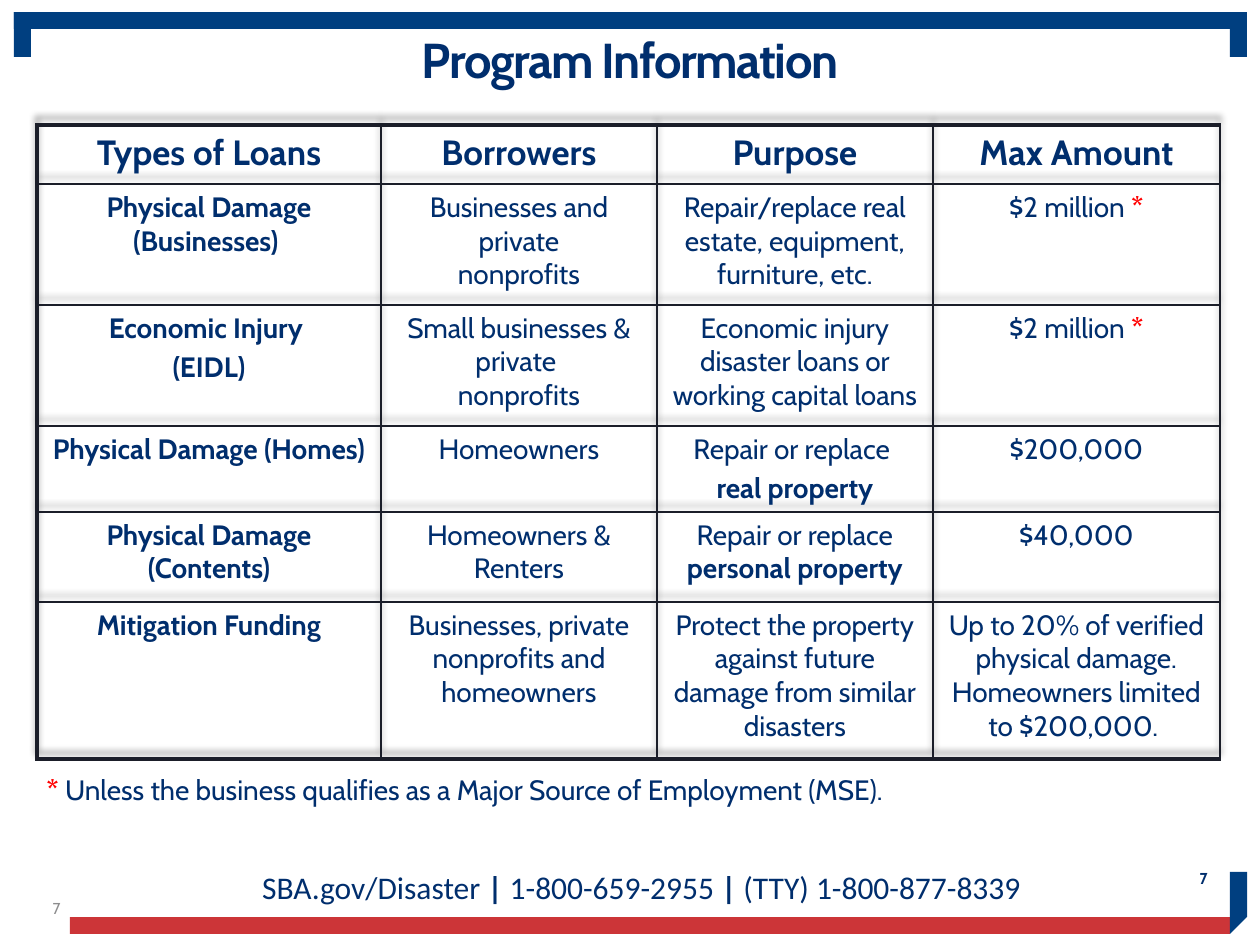
from lxml import etree
from pptx import Presentation
from pptx.dml.color import RGBColor
from pptx.enum.shapes import MSO_SHAPE
from pptx.enum.text import MSO_ANCHOR, PP_ALIGN
from pptx.oxml.ns import qn
from pptx.util import Pt

RECTANGLE = MSO_SHAPE.RECTANGLE
TOP, MIDDLE = MSO_ANCHOR.TOP, MSO_ANCHOR.MIDDLE
LEFT, CENTER, RIGHT = PP_ALIGN.LEFT, PP_ALIGN.CENTER, PP_ALIGN.RIGHT

NAVY = RGBColor(0x00, 0x2E, 0x6D)
FRAME_BLUE = RGBColor(0x00, 0x3F, 0x80)
FRAME_RED = RGBColor(0xCC, 0x35, 0x38)
STAR_RED = RGBColor(0xFF, 0x00, 0x00)
GRID = RGBColor(0x1B, 0x1E, 0x29)
GRAY = RGBColor(0x8D, 0x8D, 0x8E)

PX = 914400 / 126
WIDTH, HEIGHT = 1260, 945
THIN, THICK = 1, 2.25

COLUMN_WIDTHS = [344, 276, 276, 287]
ROW_HEIGHTS = [59, 121, 121, 86, 90, 157]

# A cell is a list of paragraphs, a paragraph a list of (text, bold, colour) runs
TWO_MILLION = [[("$2 million ", False, NAVY), ("*", True, STAR_RED)]]
LOANS = [
    ["Types of Loans", "Borrowers", "Purpose", "Max Amount"],
    ["Physical Damage (Businesses) ", "Businesses and private\nnonprofits",
     "Repair/replace real estate, equipment, furniture, etc.", TWO_MILLION],
    [[[("Economic Injury ", True, NAVY)], [("(EIDL)", True, NAVY)]],
     "Small businesses & private \nnonprofits",
     "Economic injury disaster loans or working capital loans", TWO_MILLION],
    ["Physical Damage (Homes)", "Homeowners",
     [[("Repair or replace ", False, NAVY)], [("real property", True, NAVY)]],
     "$200,000"],
    ["Physical Damage (Contents)", "Homeowners & Renters",
     [[("Repair or replace ", False, NAVY), ("personal property", True, NAVY)]],
     "$40,000"],
    ["Mitigation Funding", "Businesses, private\nnonprofits and homeowners",
     "Protect the property against future damage from similar disasters",
     "Up to 20% of verified physical damage. Homeowners limited to $200,000. "],
]


def emu(*lengths):
    return [round(length * PX) for length in lengths]


def write_paragraph(paragraph, runs, size, align, font="Cabin"):
    paragraph.alignment = align
    paragraph.font.name = font
    paragraph.font.size = Pt(size)
    for text, bold, color in runs:
        for index, line in enumerate(text.split("\n")):
            if index:
                paragraph.add_line_break()
            run = paragraph.add_run()
            run.text = line
            run.font.name = font
            run.font.size = Pt(size)
            run.font.bold = bold
            run.font.color.rgb = color


def add_label(slide, box, runs, size, align, anchor=TOP, font="Cabin"):
    frame = slide.shapes.add_textbox(*emu(*box)).text_frame
    frame.word_wrap = True
    frame.vertical_anchor = anchor
    write_paragraph(frame.paragraphs[0], runs, size, align, font)


def paint(shape, color):
    shape.shadow.inherit = False
    shape.fill.solid()
    shape.fill.fore_color.rgb = color
    shape.line.fill.background()


def add_frame(slide, left, top, right, bottom):
    bar, corner, tail = 17, 45, 62
    inner_right = right - bar
    bars = [
        (left, top, inner_right - left, bar, FRAME_BLUE),
        (left, top, bar, corner, FRAME_BLUE),
        (inner_right, top, bar, corner, FRAME_BLUE),
        (left + 56, bottom - bar, inner_right - left - 56, bar, FRAME_RED),
    ]
    for *box, color in bars:
        paint(slide.shapes.add_shape(RECTANGLE, *emu(*box)), color)
    # Lower right corner with a slanted end
    builder = slide.shapes.build_freeform(inner_right, bottom - tail, scale=PX)
    builder.add_line_segments([(right, bottom - tail), (right, bottom - bar),
                               (inner_right, bottom)])
    paint(builder.convert_to_shape(), FRAME_BLUE)


def add_title(slide, box):
    title = slide.shapes.title
    title.left, title.top, title.width, title.height = emu(*box)
    title.text_frame.vertical_anchor = TOP
    heading = title.text_frame.paragraphs[0]
    write_paragraph(heading, [("Program Information", True, NAVY)], 28, CENTER)
    heading.line_spacing = 0.9
    heading.runs[0].font._element.set("spc", "-80")


def set_borders(cell, widths):
    properties = cell._tc.get_or_add_tcPr()
    for index, (side, width) in enumerate(widths.items()):
        line = etree.Element(qn(f"a:ln{side}"), w=str(Pt(width)))
        fill = etree.SubElement(line, qn("a:solidFill"))
        etree.SubElement(fill, qn("a:srgbClr"), val=str(GRID))
        properties.insert(index, line)


def add_table_shadow(table):
    effects = etree.Element(qn("a:effectLst"))
    shadow = etree.SubElement(effects, qn("a:outerShdw"), blurRad="50800",
                              dist="50800", dir="16200000", rotWithShape="0")
    color = etree.SubElement(shadow, qn("a:prstClr"), val="black")
    etree.SubElement(color, qn("a:alpha"), val="40000")
    table._tbl.tblPr.insert(0, effects)


def add_loan_table(slide, left, top):
    box = emu(left, top, sum(COLUMN_WIDTHS), sum(ROW_HEIGHTS))
    table = slide.shapes.add_table(len(LOANS), len(COLUMN_WIDTHS), *box).table
    table.first_row = table.horz_banding = False
    add_table_shadow(table)
    for column, width in zip(table.columns, emu(*COLUMN_WIDTHS)):
        column.width = width
    last = len(LOANS) - 1
    for r, (row, height) in enumerate(zip(LOANS, emu(*ROW_HEIGHTS))):
        table.rows[r].height = height
        for c, content in enumerate(row):
            cell = table.cell(r, c)
            cell.fill.background()
            set_borders(cell, {"L": THIN if c else THICK, "R": THIN,
                               "T": THIN if r else THICK,
                               "B": THICK if r == last else THIN})
            if isinstance(content, str):
                content = [[(content, r == 0 or c == 0, NAVY)]]
            for index, runs in enumerate(content):
                frame = cell.text_frame
                paragraph = frame.add_paragraph() if index else frame.paragraphs[0]
                if index:
                    paragraph.space_before = Pt(3.2)
                write_paragraph(paragraph, runs, 16 if r else 20, CENTER)


def add_footer(slide, left, top):
    add_label(slide, (left, top + 19, 73, 73), [("7", False, GRAY)], 9, RIGHT, MIDDLE)
    add_label(slide, (left + 936, top, 284, 50), [("7", True, NAVY)], 9, RIGHT, MIDDLE)
    contact = [("SBA.gov/Disaster ", False, NAVY), ("| ", True, NAVY),
               ("1-800-659-2955", False, NAVY), (" | ", True, NAVY),
               ("(TTY) 1-800-877-8339 ", False, NAVY)]
    add_label(slide, (left + 87, top + 9, 1116, 50), contact, 18, CENTER, font="Calibri")


def main():
    deck = Presentation()
    deck.slide_width, deck.slide_height = emu(WIDTH, HEIGHT)
    slide = deck.slides.add_slide(deck.slide_layouts[5])
    add_frame(slide, 14, 12, 1247, 934)
    add_loan_table(slide, 37, 125)
    footnote = [("* ", True, STAR_RED),
                ("Unless the business qualifies as a Major Source of Employment (MSE).",
                 False, NAVY)]
    add_label(slide, (34, 766, 1182, 47), footnote, 16, LEFT)
    add_title(slide, (87, 30, 1086, 160))
    add_footer(slide, 0, 853)
    deck.save("out.pptx")


if __name__ == "__main__":
    main()
